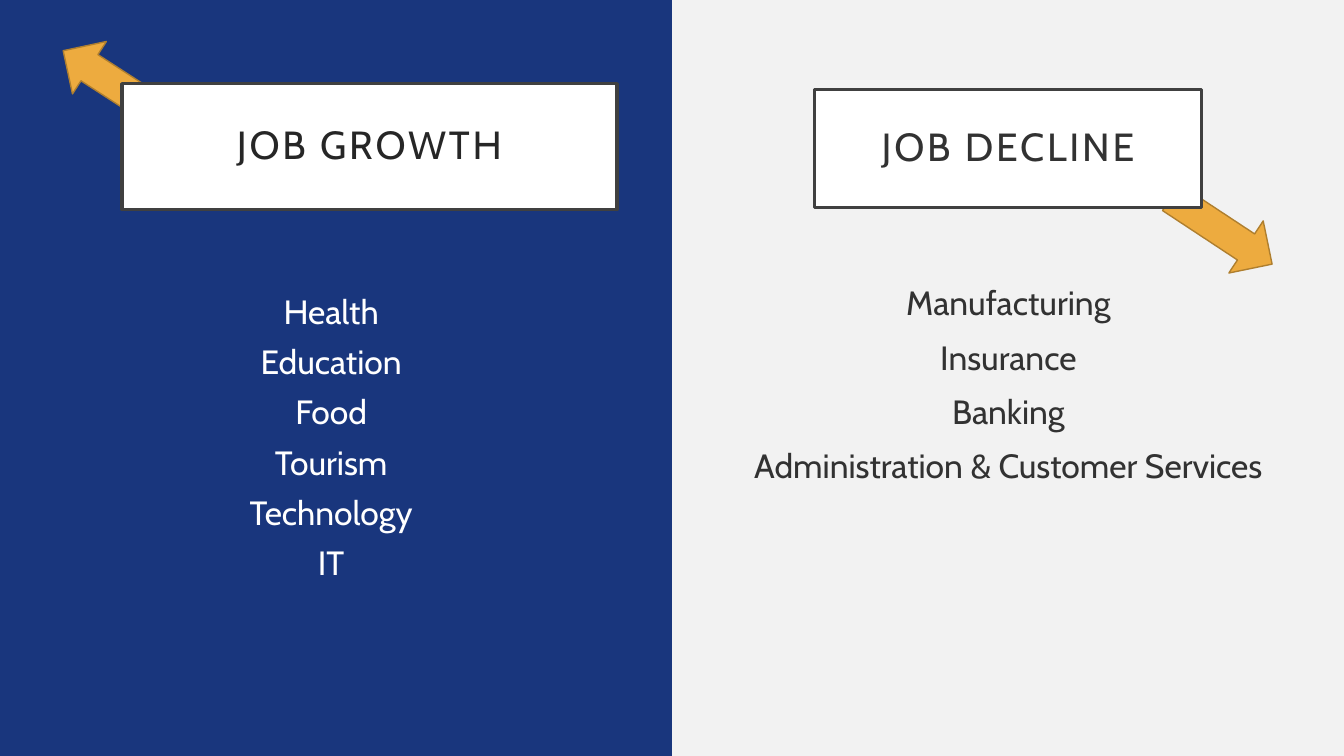
"""Builds a split slide that contrasts job growth with job decline."""
from pptx import Presentation
from pptx import util as u
from pptx.dml.color import RGBColor
from pptx.enum import shapes, text

COLORS = {
    "background": "F2F2F2", "panel": "19367D", "arrow": "EDAB3F",
    "arrow_line": "AF7F2F", "white": "FFFFFF", "border": "404040",
    "growth_title": "262626", "dark": "323232",
}
GROWTH = ["Health", "Education", "Food", "Tourism", "Technology", "IT"]
DECLINE = ["Manufacturing", "Insurance", "Banking",
           "Administration & Customer Services"]


def rgb(name):
    return RGBColor.from_string(COLORS[name])


def style(sp, fill, line=None, width=1):
    sp.fill.solid()
    sp.fill.fore_color.rgb = rgb(fill)
    if line:
        sp.line.color.rgb = rgb(line)
        sp.line.width = u.Pt(width)
    else:
        sp.line.fill.background()


def add_shape(s, kind, box, fill, line=None, width=1, rotation=0):
    sp = s.shapes.add_shape(kind, *map(u.Pt, box))
    sp.shadow.inherit = False
    sp.rotation = rotation
    style(sp, fill, line, width)
    return sp


def add_arrow(s, left, top, rotation):
    add_shape(s, shapes.MSO_SHAPE.RIGHT_ARROW, (left, top, 86.4, 44.6),
              "arrow", "arrow_line", rotation=rotation)


def write(sp, lines, color, size=24, line_spacing=None, before=0,
          tracking=0, inset=None, anchor=text.MSO_ANCHOR.TOP):
    tf = sp.text_frame
    tf.word_wrap = True
    tf.auto_size = text.MSO_AUTO_SIZE.NONE
    tf.vertical_anchor = anchor
    if inset is not None:
        tf.margin_left = tf.margin_right = u.Pt(inset)
        tf.margin_top = tf.margin_bottom = u.Pt(inset)
    for i, line in enumerate(lines):
        p = tf.add_paragraph() if i else tf.paragraphs[0]
        p.alignment = text.PP_ALIGN.CENTER
        p.line_spacing = line_spacing
        p.space_before = u.Pt(before)
        r = p.add_run()
        r.text = line
        r.font.name = "Cabin"
        r.font.size = u.Pt(size)
        r.font.color.rgb = rgb(color)
        if tracking:
            r.font._element.set("spc", str(tracking * 100))


def write_heading(sp, heading, color):
    write(sp, [heading], color, size=28, line_spacing=0.9, tracking=2,
          inset=14.4, anchor=text.MSO_ANCHOR.MIDDLE)


def add_title(s, heading, box):
    sp = s.shapes.title
    sp.left, sp.top, sp.width, sp.height = map(u.Pt, box)
    style(sp, "white", "border", 2.5)
    write_heading(sp, heading, "growth_title")
    s.shapes.element.append(sp.element)


def add_list(s, box, lines, color, line_spacing=None):
    sp = s.shapes.add_textbox(*map(u.Pt, box))
    write(sp, lines, color, line_spacing=line_spacing, before=10)


def main():
    prs = Presentation()
    prs.slide_width, prs.slide_height = u.Pt(960), u.Pt(540)
    s = prs.slides.add_slide(prs.slide_layouts[5])
    s.background.fill.solid()
    s.background.fill.fore_color.rgb = rgb("background")
    rect = shapes.MSO_SHAPE.RECTANGLE

    add_shape(s, rect, (0, 0, 480, 540), "panel")
    add_arrow(s, 38.2, 37.4, 212.9)
    add_title(s, "JOB GROWTH", (87.1, 59.8, 353.5, 90))
    add_list(s, (530.6, 198, 379.4, 269.3), DECLINE, "dark")
    add_list(s, (87.1, 207.4, 298.8, 222.5), GROWTH, "white", 0.9)
    add_arrow(s, 829.4, 142.6, 33.4)
    decline = add_shape(s, rect, (581.8, 64.1, 276.5, 84.2),
                        "white", "border", 2.5)
    write_heading(decline, "JOB DECLINE", "dark")

    prs.save("out.pptx")


if __name__ == "__main__":
    main()
